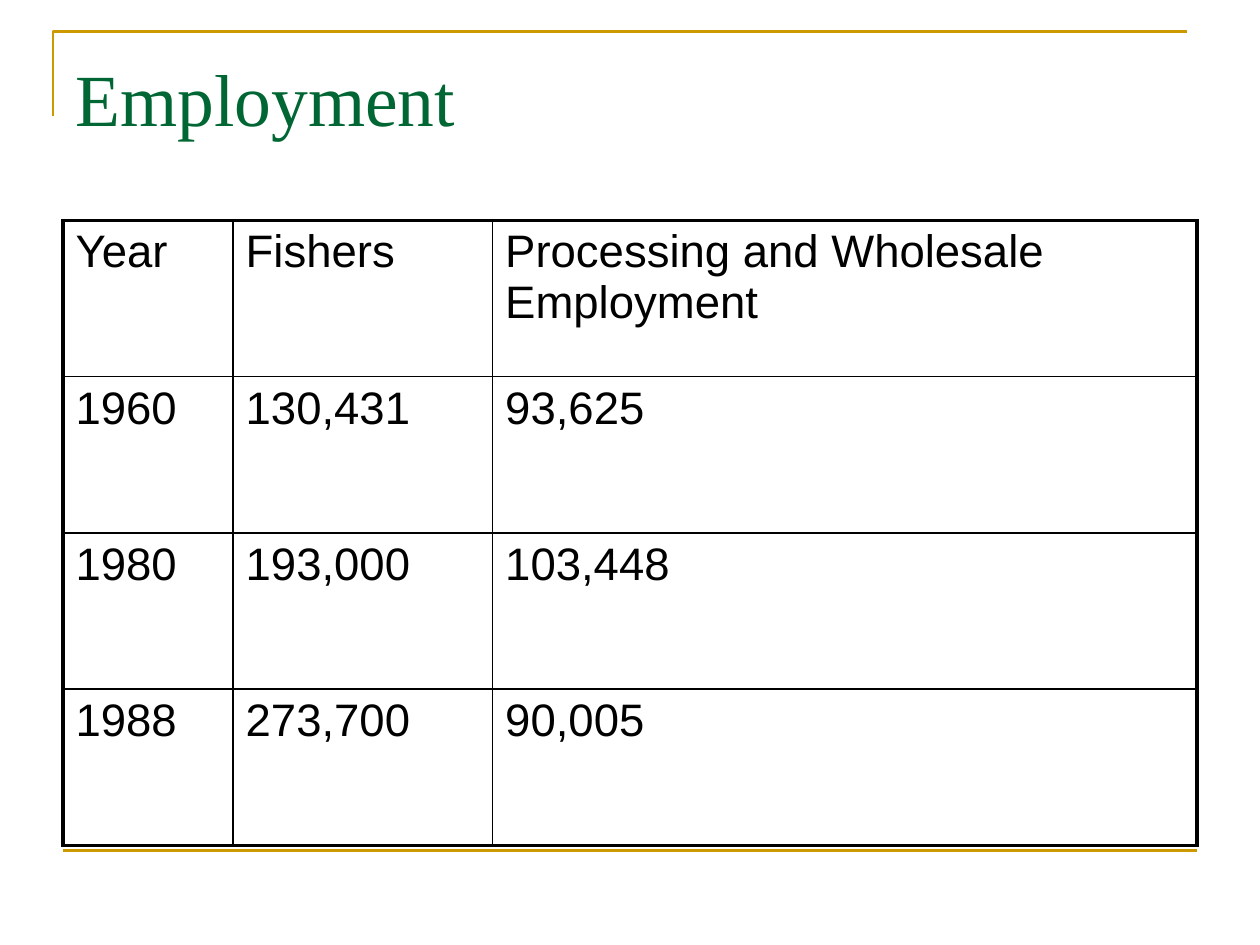
"""Build the Employment slide: a framed title above a table of fishery jobs."""
from lxml import etree
from pptx import Presentation
from pptx.dml.color import RGBColor
from pptx.enum.shapes import MSO_CONNECTOR
from pptx.enum.text import MSO_ANCHOR, PP_ALIGN
from pptx.oxml import parse_xml
from pptx.oxml.ns import nsdecls, qn
from pptx.util import Inches, Pt

STRAIGHT = MSO_CONNECTOR.STRAIGHT
TOP = MSO_ANCHOR.TOP
LEFT = PP_ALIGN.LEFT

THEME = {
    "gold": RGBColor.from_string("CC9900"),
    "rule": Pt(1.5),
    "border": "000000",
    "outer": Pt(2.25),
    "inner": Pt(1),
    "title": {"name": "Times New Roman", "size": Pt(42), "bold": False,
              "color": RGBColor.from_string("006633")},
    "cell": {"name": "Arial", "size": Pt(26), "bold": False,
             "color": RGBColor.from_string("000000")},
}

EMPLOYMENT = [
    ("Year", "Fishers", "Processing and Wholesale Employment"),
    ("1960", "130,431", "93,625"),
    ("1980", "193,000", "103,448"),
    ("1988", "273,700", "90,005"),
]
COLUMN_WIDTHS = [1.35, 2.06, 5.59]
ROW_HEIGHT = 1.24


def style_text(paragraph, style):
    paragraph.alignment = LEFT
    for attribute, value in style.items():
        if attribute == "color":
            paragraph.font.color.rgb = value
        else:
            setattr(paragraph.font, attribute, value)


def add_border(cell, side, width):
    cell._tc.get_or_add_tcPr().append(parse_xml(
        f'<a:ln{side} {nsdecls("a")} w="{width}"><a:solidFill>'
        f'<a:srgbClr val="{THEME["border"]}"/></a:solidFill></a:ln{side}>'))


deck = Presentation()
deck.slide_width, deck.slide_height = Inches(10), Inches(7.5)
slide = deck.slides.add_slide(deck.slide_layouts[5])

outline = slide.shapes.build_freeform(Inches(0.42), Inches(0.92))
outline.add_line_segments(
    [(Inches(0.42), Inches(0.25)), (Inches(9.42), Inches(0.25))], close=False)
corner = outline.convert_to_shape()
corner.shadow.inherit = False
corner.fill.background()

footer_rule = slide.shapes.add_connector(
    STRAIGHT, Inches(0.5), Inches(6.75), Inches(9.5), Inches(6.75))
etree.SubElement(footer_rule._element.spPr, qn("a:effectLst"))

for rule in (corner, footer_rule):
    rule.line.color.rgb = THEME["gold"]
    rule.line.width = THEME["rule"]

heading = slide.shapes.title
heading.left, heading.top = Inches(0.5), Inches(0.3)
heading.width, heading.height = Inches(9), Inches(1.25)
heading.text_frame.text = "Employment"
heading.text_frame.vertical_anchor = TOP
heading.text_frame.margin_top = Inches(0.12)
style_text(heading.text_frame.paragraphs[0], THEME["title"])

last_row, last_column = len(EMPLOYMENT) - 1, len(COLUMN_WIDTHS) - 1
jobs = slide.shapes.add_table(
    len(EMPLOYMENT), len(COLUMN_WIDTHS), Inches(0.5), Inches(1.75),
    Inches(sum(COLUMN_WIDTHS)), Inches(ROW_HEIGHT * len(EMPLOYMENT))).table
jobs.first_row = jobs.horz_banding = False
for column, width in zip(jobs.columns, COLUMN_WIDTHS):
    column.width = Inches(width)

for r, record in enumerate(EMPLOYMENT):
    jobs.rows[r].height = Inches(ROW_HEIGHT)
    for c, entry in enumerate(record):
        cell = jobs.cell(r, c)
        cell.text = entry
        cell.vertical_anchor = TOP
        style_text(cell.text_frame.paragraphs[0], THEME["cell"])
        on_edge = {"L": c == 0, "R": c == last_column,
                   "T": r == 0, "B": r == last_row}
        for side, is_outer in on_edge.items():
            add_border(cell, side, THEME["outer" if is_outer else "inner"])
        cell.fill.background()

deck.save("out.pptx")
